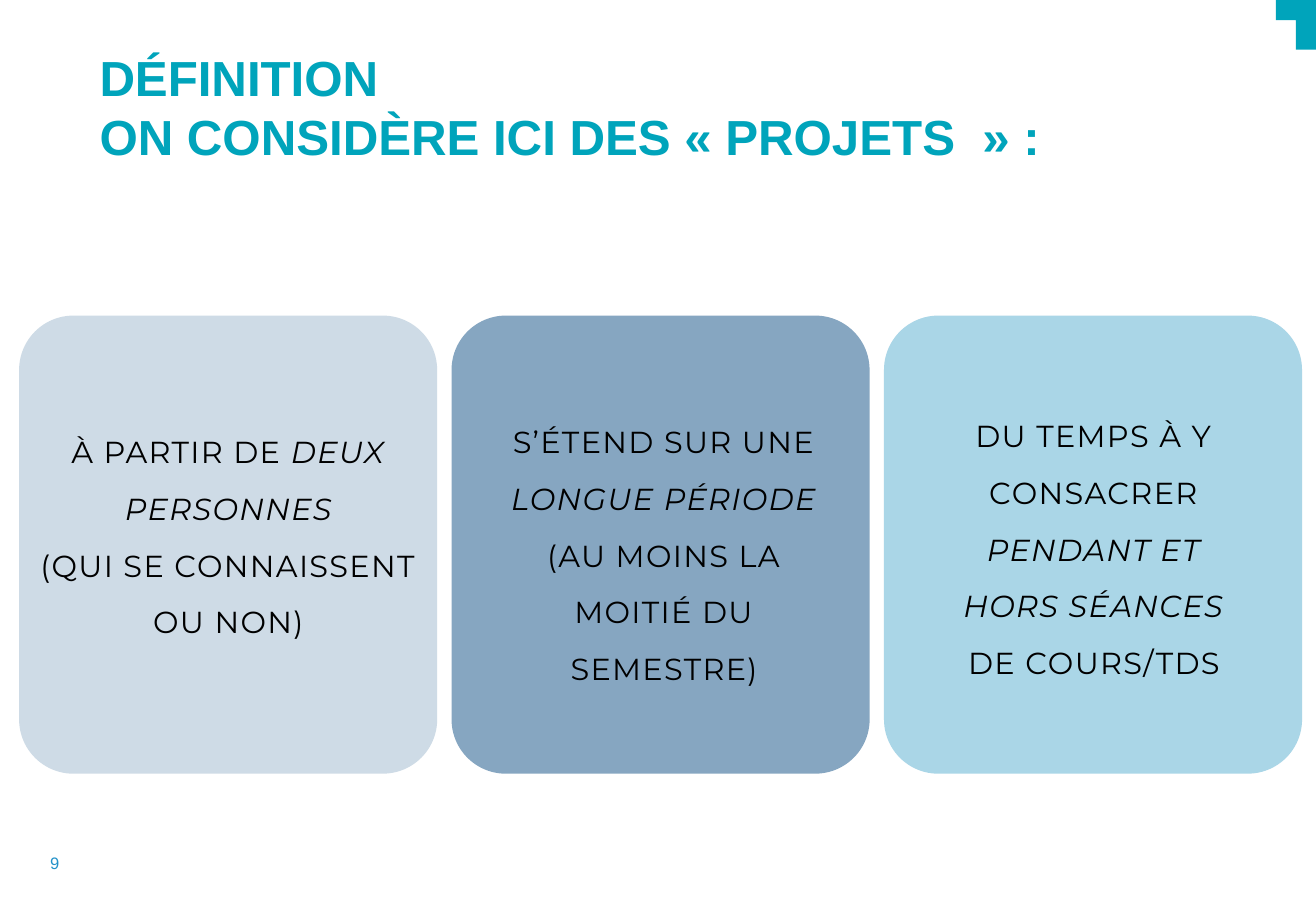
from pptx import Presentation
from pptx.dml.color import RGBColor
from pptx.enum.shapes import MSO_SHAPE as Preset
from pptx.enum.text import MSO_ANCHOR as Anchor, MSO_AUTO_SIZE as AutoSize, PP_ALIGN as Align
from pptx.util import Cm, Pt

TEAL = "00A4BB"
CARD_LEFT, CARD_TOP, CARD_WIDTH, CARD_HEIGHT, CARD_STEP = 0.4, 6.6, 8.74, 9.58, 9.04
CORNER_POINTS = [(26.67, 0), (27.51, 0), (27.51, 1.04), (27.09, 1.04), (27.09, 0.42), (26.67, 0.42)]

# Card fill, text area (left, top, width, height) and paragraphs of (text, italic) spans
CARDS = [
    ("CEDBE6", (0.76, 8.64, 8.03, 4.7), [
        [("À PARTIR DE ", False), ("DEUX PERSONNES", True)],
        [("(QUI SE CONNAISSENT OU NON)", False)],
    ]),
    ("86A6C1", (10.19, 8.43, 7.39, 5.92), [
        [("S’ÉTEND SUR UNE ", False), ("LONGUE PÉRIODE", True),
         (" (AU MOINS LA MOITIÉ DU SEMESTRE)", False)],
    ]),
    ("AAD6E7", (19.91, 8.31, 5.92, 5.92), [
        [("DU TEMPS À Y CONSACRER ", False), ("PENDANT ET HORS SÉANCES", True),
         (" DE COURS/TDS", False)],
    ]),
]


def color(value):
    return RGBColor.from_string(value)


def place(shape, left, top, width, height):
    shape.left, shape.top = Cm(left), Cm(top)
    shape.width, shape.height = Cm(width), Cm(height)


def set_frame(frame, anchor=Anchor.TOP, margins=(0, 0, 0, 0)):
    """Set wrapping, anchor and margins (left, top, right, bottom)."""
    frame.word_wrap = True
    frame.auto_size = AutoSize.NONE
    frame.vertical_anchor = anchor
    (frame.margin_left, frame.margin_top,
     frame.margin_right, frame.margin_bottom) = map(Cm, margins)


def add_span(para, text, size, fill, font="Arial", bold=False, italic=False, tracking=0):
    span = para.add_run()
    span.text = text
    span.font.name, span.font.size = font, Pt(size)
    span.font.bold, span.font.italic = bold, italic
    span.font.color.rgb = color(fill)
    if tracking:
        span.font._element.set("spc", str(round(tracking * 100)))


def paint(shape, fill):
    """Give a flat fill with no line and no shadow."""
    shape.shadow.inherit = False
    shape.fill.solid()
    shape.fill.fore_color.rgb = color(fill)
    shape.line.fill.background()


def add_outline(page, points, fill):
    start, *others = [(Cm(x), Cm(y)) for x, y in points]
    builder = page.shapes.build_freeform(*start)
    builder.add_line_segments(others, close=True)
    paint(builder.convert_to_shape(), fill)


def add_card(page, area, fill):
    card = page.shapes.add_shape(Preset.ROUNDED_RECTANGLE, *map(Cm, area))
    card.adjustments[0] = 0.13
    paint(card, fill)


def fill_title(page, lines):
    title = page.shapes.title
    place(title, 1.83, 1, 25.25, 2.5)
    set_frame(title.text_frame, margins=(0.25, 0, 0.25, 0))
    para = title.text_frame.paragraphs[0]
    para.alignment = Align.LEFT
    para.line_spacing = Pt(34.7)
    for index, line in enumerate(lines):
        if index:
            para.add_line_break()
        add_span(para, line, 29.2, TEAL, bold=True)


def add_card_text(page, area, paragraphs):
    frame = page.shapes.add_textbox(*map(Cm, area)).text_frame
    set_frame(frame)
    for index, spans in enumerate(paragraphs):
        para = frame.add_paragraph() if index else frame.paragraphs[0]
        para.alignment = Align.CENTER
        para.line_spacing = Pt(33.6)
        for text, italic in spans:
            add_span(para, text, 18, "000000", font="Montserrat", italic=italic, tracking=0.8)


def add_page_number(page, number):
    box = page.shapes.add_textbox(Cm(0.15), Cm(17.7), Cm(1.09), Cm(0.69))
    set_frame(box.text_frame, Anchor.MIDDLE, (0.25, 0.13, 0, 0.13))
    para = box.text_frame.paragraphs[0]
    para.alignment = Align.RIGHT
    add_span(para, number, 9.8, "2392C9")


def main():
    deck = Presentation()
    deck.slide_width, deck.slide_height = Cm(27.51), Cm(19.05)
    page = deck.slides.add_slide(deck.slide_layouts[5])

    add_outline(page, CORNER_POINTS, TEAL)
    fill_title(page, ["DÉFINITION", "ON CONSIDÈRE ICI DES « PROJETS  » :"])
    add_page_number(page, "9")

    for index, (fill, text_area, paragraphs) in enumerate(CARDS):
        add_card(page, (CARD_LEFT + index * CARD_STEP, CARD_TOP, CARD_WIDTH, CARD_HEIGHT), fill)
        add_card_text(page, text_area, paragraphs)

    deck.save("out.pptx")


if __name__ == "__main__":
    main()
